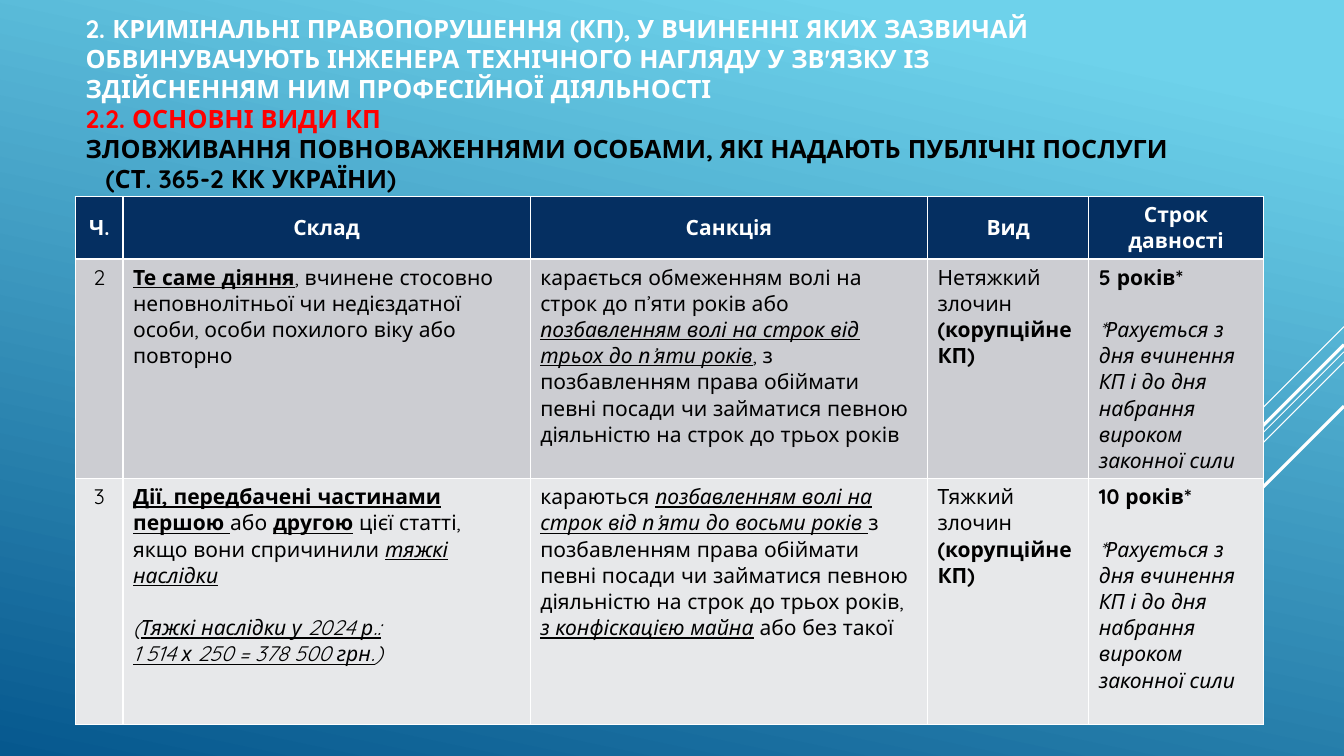
import pptx
import pptx.util
import pptx.dml.color
import pptx.enum.shapes
import pptx.enum.text
import pptx.oxml.ns
import lxml.etree

Inches = pptx.util.Inches
Pt = pptx.util.Pt
RGBColor = pptx.dml.color.RGBColor
CENTER = pptx.enum.text.PP_ALIGN.CENTER
LEFT = pptx.enum.text.PP_ALIGN.LEFT
MIDDLE = pptx.enum.text.MSO_ANCHOR.MIDDLE
TOP = pptx.enum.text.MSO_ANCHOR.TOP

WHITE = RGBColor(0xFF, 0xFF, 0xFF)
BLACK = RGBColor(0x00, 0x00, 0x00)
RED = RGBColor(0xFF, 0x00, 0x00)
NAVY = RGBColor(0x05, 0x2F, 0x61)
GREY = RGBColor(0xCC, 0xCD, 0xD2)
PALE = RGBColor(0xE7, 0xE8, 0xEA)
SKY = RGBColor(0x6E, 0xD2, 0xEB)
OCEAN = RGBColor(0x06, 0x58, 0x8E)

SLIDE_WIDTH = 13.33
TITLE_SIZE, TABLE_SIZE = 18, 15
TABLE_LINE = 18.75

# Accent lines: start height at the right edge, 45° run, width
ACCENT_LINES = [
    (3.24, 1.0, 0.75),
    (3.49, 3.26, 0.75),
    (3.59, 2.07, 0.75),
    (3.42, 1.91, 2.25),
    (4.03, 1.39, 2.25),
]

# Title lines: text, colour, left indent
TITLE_LINES = [
    ("2. КРИМІНАЛЬНІ ПРАВОПОРУШЕННЯ (КП), У ВЧИНЕННІ ЯКИХ ЗАЗВИЧАЙ "
     "ОБВИНУВАЧУЮТЬ ІНЖЕНЕРА ТЕХНІЧНОГО НАГЛЯДУ У ЗВ'ЯЗКУ ІЗ", WHITE, 0),
    ("ЗДІЙСНЕННЯМ НИМ ПРОФЕСІЙНОЇ ДІЯЛЬНОСТІ", WHITE, 0),
    ("2.2. ОСНОВНІ ВИДИ КП", RED, 0),
    ("ЗЛОВЖИВАННЯ ПОВНОВАЖЕННЯМИ ОСОБАМИ, ЯКІ НАДАЮТЬ ПУБЛІЧНІ ПОСЛУГИ", BLACK, 0),
    ("(СТ. 365-2 КК УКРАЇНИ)", BLACK, 0.2),
]

# Table: a cell is a list of paragraphs (gap before, runs);
# a run is (text, flags), where b = bold, i = italic, u = underline
COLUMN_WIDTHS = [0.47, 4.04, 3.94, 1.6, 1.73]
ROW_HEIGHTS = [0.62, 2.18, 2.44]
HEADERS = ["Ч.", "Склад", "Санкція", "Вид", "Строк давності"]


def crime_kind(kind):
    return [(0, [(kind + " злочин ", ""), ("(корупційне КП)", "b")])]


def limitation(term):
    note = "*Рахується з дня вчинення КП і до дня набрання вироком законної сили"
    return [(0, [(term + " років*", "b")]), (TABLE_LINE, [(note, "i")])]


PART_TWO = [
    [(0, [("2", "")])],
    [(0, [("Те саме діяння", "bu"),
          (", вчинене стосовно неповнолітньої чи недієздатної особи, "
           "особи похилого віку або повторно", "")])],
    [(0, [("карається обмеженням волі на строк до п’яти років або ", ""),
          ("позбавленням волі на строк від трьох до п’яти років", "iu"),
          (", з позбавленням права обіймати певні посади чи займатися певною "
           "діяльністю на строк до трьох років", "")])],
    crime_kind("Нетяжкий"),
    limitation("5"),
]
PART_THREE = [
    [(0, [("3", "")])],
    [(0, [("Дії, передбачені частинами першою ", "bu"), ("або ", ""),
          ("другою", "bu"), (" цієї статті, якщо вони спричинили ", ""),
          ("тяжкі наслідки", "iu")]),
     (TABLE_LINE, [("(", "i"), ("Тяжкі наслідки у 2024 р.:", "iu")]),
     (0, [("1 514 х 250 = 378 500 грн.", "iu"), (")", "i")])],
    [(0, [("караються ", ""),
          ("позбавленням волі на строк від п’яти до восьми років ", "iu"),
          ("з позбавленням права обіймати певні посади чи займатися певною "
           "діяльністю на строк до трьох років, ", ""),
          ("з конфіскацією майна", "iu"), (" або без такої", "")])],
    crime_kind("Тяжкий"),
    limitation("10"),
]
HEADER_ROW = [[(0, [(header, "b")])] for header in HEADERS]


def apply_format(target, values):
    for name, value in values.items():
        setattr(target, name, value)


class SlideBuilder:
    def __init__(self, slide, font_name):
        self.slide = slide
        self.font_name = font_name

    def background(self, stops, angle):
        fill = self.slide.background.fill
        fill.gradient()
        fill.gradient_angle = 360 - angle
        for stop, (position, color) in zip(fill.gradient_stops, stops):
            stop.position = position
            stop.color.rgb = color

    def line(self, start, end, width):
        connector = self.slide.shapes.add_connector(
            pptx.enum.shapes.MSO_CONNECTOR.STRAIGHT,
            *(Inches(value) for value in (*start, *end)))
        connector.line.color.rgb = WHITE
        connector.line.width = Pt(width)
        properties = connector._element.spPr
        lxml.etree.SubElement(properties, pptx.oxml.ns.qn("a:effectLst"))

    def run(self, paragraph, text, size, color, flags):
        run = paragraph.add_run()
        run.text = text
        apply_format(run.font, {
            "name": self.font_name, "size": Pt(size),
            "bold": "b" in flags, "italic": "i" in flags, "underline": "u" in flags,
        })
        run.font.color.rgb = color

    def title(self, box, lines, line_spacing):
        shape = self.slide.shapes.add_textbox(*(Inches(value) for value in box))
        frame = shape.text_frame
        apply_format(frame, {"word_wrap": True, "vertical_anchor": MIDDLE})
        for index, (text, color, indent) in enumerate(lines):
            paragraph = frame.add_paragraph() if index else frame.paragraphs[0]
            paragraph.line_spacing = Pt(line_spacing)
            if indent:
                paragraph._p.get_or_add_pPr().set("marL", str(Inches(indent)))
            self.run(paragraph, text, TITLE_SIZE, color, "b")

    def cell(self, cell, paragraphs, fill, color, alignment, anchor):
        cell.fill.solid()
        cell.fill.fore_color.rgb = fill
        cell.vertical_anchor = anchor
        frame = cell.text_frame
        for index, (gap, runs) in enumerate(paragraphs):
            paragraph = frame.add_paragraph() if index else frame.paragraphs[0]
            apply_format(paragraph, {"alignment": alignment, "space_before": Pt(gap)})
            for text, flags in runs:
                self.run(paragraph, text, TABLE_SIZE, color, flags)

    def table(self, left, top, rows, fills):
        table = self.slide.shapes.add_table(
            len(rows), len(COLUMN_WIDTHS), Inches(left), Inches(top),
            Inches(sum(COLUMN_WIDTHS)), Inches(sum(ROW_HEIGHTS))).table
        for column, width in zip(table.columns, COLUMN_WIDTHS):
            column.width = Inches(width)
        for row, height in zip(table.rows, ROW_HEIGHTS):
            row.height = Inches(height)
        for i, (row, fill) in enumerate(zip(rows, fills)):
            for j, paragraphs in enumerate(row):
                self.cell(table.cell(i, j), paragraphs, fill,
                          BLACK if i else WHITE,
                          LEFT if i and j else CENTER,
                          TOP if i else MIDDLE)


def main():
    presentation = pptx.Presentation()
    presentation.slide_width = Inches(SLIDE_WIDTH)
    presentation.slide_height = Inches(7.5)
    slide = presentation.slides.add_slide(presentation.slide_layouts[6])
    builder = SlideBuilder(slide, "Quicksand")

    # Backdrop
    builder.background([(0.1, SKY), (1.0, OCEAN)], 102)
    for height, length, width in ACCENT_LINES:
        builder.line((SLIDE_WIDTH, height),
                     (SLIDE_WIDTH - length, height + length), width)

    # Heading and table of offences
    builder.title((0.75, 0.44, 11, 1.17), TITLE_LINES, 21.5)
    builder.table(0.75, 1.95, [HEADER_ROW, PART_TWO, PART_THREE], [NAVY, GREY, PALE])

    presentation.save("out.pptx")


if __name__ == "__main__":
    main()
